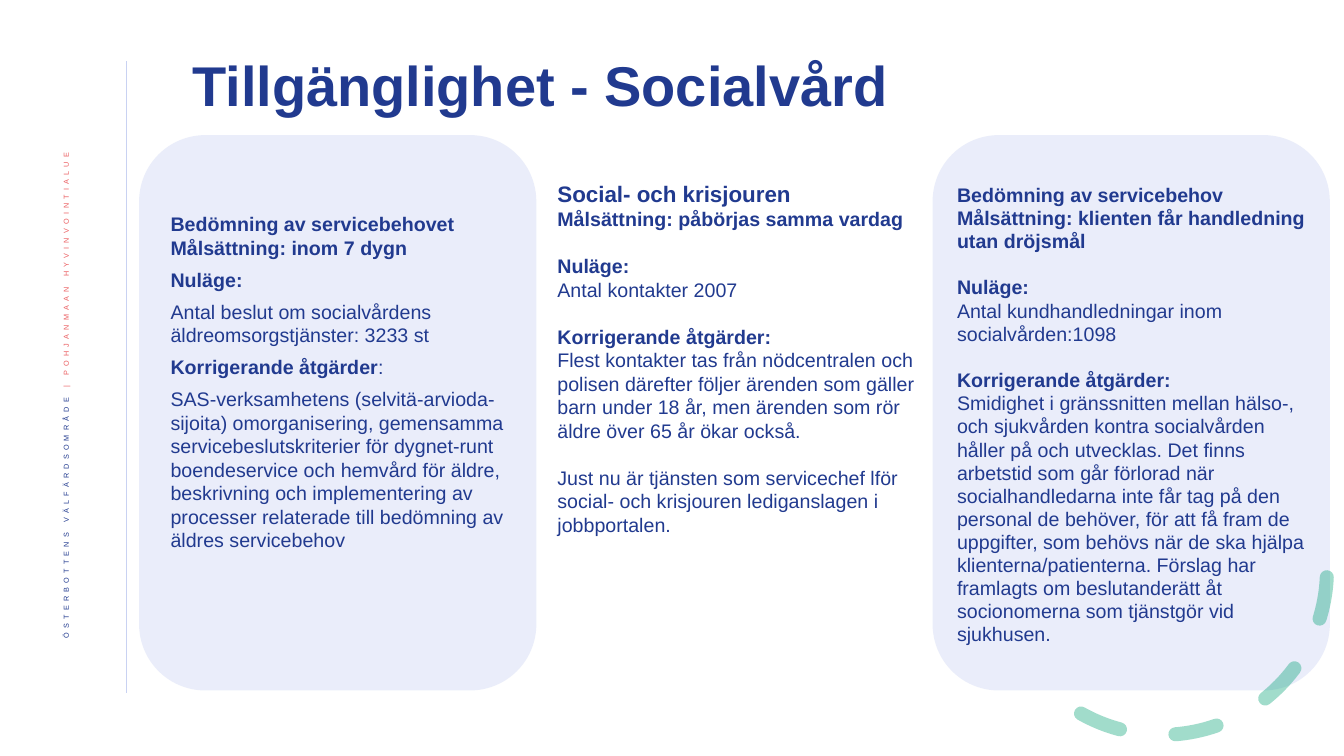
from lxml.etree import SubElement
from pptx import Presentation
from pptx.dml.color import RGBColor
from pptx.enum.dml import MSO_LINE as Dash
from pptx.enum.shapes import MSO_CONNECTOR as Conn, MSO_SHAPE as Shape
from pptx.enum.text import MSO_ANCHOR as Anchor, PP_ALIGN as Align
from pptx.oxml.ns import qn
from pptx.util import Inches, Pt

NAVY = RGBColor(0x21, 0x3A, 0x8F)
CORAL = RGBColor(0xEB, 0x5C, 0x5F)
PALE = RGBColor(0xC9, 0xD2, 0xF2)
GREEN = RGBColor(0x00, 0xA1, 0x74)
FONT = "Arial"

# Each paragraph: text, bold, formats that differ from the column's own
LEFT = [
    ("Bedömning av servicebehovet Målsättning: inom 7 dygn", True, {}),
    ("Nuläge:", True, {}),
    ("Antal beslut om socialvårdens äldreomsorgstjänster: 3233 st", False, {}),
    ("Korrigerande åtgärder", True, {"tail": ":"}),
    ("SAS-verksamhetens (selvitä-arvioda-sijoita) omorganisering, gemensamma "
     "servicebeslutskriterier för dygnet-runt boendeservice och hemvård för äldre, "
     "beskrivning och implementering av processer relaterade till bedömning av "
     "äldres servicebehov", False, {}),
]
GAP = {"space_before": Pt(16.8)}
MIDDLE = [
    ("Social- och krisjouren", True, {"size": 16, "line_spacing": Pt(19)}),
    ("Målsättning: påbörjas samma vardag", True, {}),
    ("Nuläge:", True, GAP),
    ("Antal kontakter 2007", False, {}),
    ("Korrigerande åtgärder:", True, GAP),
    ("Flest kontakter tas från nödcentralen och polisen därefter följer ärenden "
     "som gäller barn under 18 år, men ärenden som rör äldre över 65 år ökar också.",
     False, {}),
    ("Just nu är tjänsten som servicechef lför social- och krisjouren "
     "lediganslagen i jobbportalen.", False, GAP),
]
RIGHT = [
    ("Bedömning av servicebehov", True, {"line_spacing": Pt(18.8)}),
    ("Målsättning: klienten får handledning utan dröjsmål", True, {}),
    ("Nuläge:", True, GAP),
    ("Antal kundhandledningar inom socialvården:1098", False, {}),
    ("Korrigerande åtgärder:", True, GAP),
    ("Smidighet i gränssnitten mellan hälso-, och sjukvården kontra socialvården "
     "håller på och utvecklas. Det finns arbetstid som går förlorad när "
     "socialhandledarna inte får tag på den personal de behöver, för att få fram de "
     "uppgifter, som behövs när de ska hjälpa klienterna/patienterna. Förslag har "
     "framlagts om beslutanderätt åt socionomerna som tjänstgör vid sjukhusen.",
     False, {}),
]


def style(item, values):
    for name, value in values.items():
        setattr(item, name, value)


def fade(node, percent):
    """Make the solid colour below node partly transparent."""
    color = node.find(".//" + qn("a:srgbClr"))
    SubElement(color, qn("a:alpha"), val=str(percent * 1000))


def add_run(para, text, size, bold=False, color=NAVY):
    run = para.add_run()
    run.text = text
    style(run.font, {"name": FONT, "size": Pt(size), "bold": bold})
    run.font.color.rgb = color
    return run


def add_box(slide, left, top, width, height):
    box = slide.shapes.add_textbox(*map(Inches, (left, top, width, height)))
    box.text_frame.word_wrap = True
    return box.text_frame


def fill_text(frame, rows, **base):
    for i, (text, bold, extra) in enumerate(rows):
        para = frame.paragraphs[0] if i == 0 else frame.add_paragraph()
        form = {"alignment": Align.LEFT, **base, **extra}
        size, tail = form.pop("size", 14), form.pop("tail", "")
        style(para, form)
        add_run(para, text, size, bold)
        if tail:
            add_run(para, tail, size)


def add_card(slide, left, indent, bottom):
    """Add a rounded card and return its text frame, inset at left and bottom."""
    card = slide.shapes.add_shape(
        Shape.ROUNDED_RECTANGLE, *map(Inches, (left, 1.34, 3.94, 5.51)))
    card.shadow.inherit = False
    card.fill.solid()
    card.fill.fore_color.rgb = PALE
    fade(card.fill._xPr, 38)
    card.line.fill.background()
    style(card.text_frame, {
        "word_wrap": True, "vertical_anchor": Anchor.MIDDLE,
        "margin_left": Inches(indent), "margin_right": 0,
        "margin_top": Inches(0.02), "margin_bottom": Inches(bottom)})
    return card.text_frame


def add_rule(slide):
    rule = slide.shapes.add_connector(
        Conn.STRAIGHT, *map(Inches, (1.25, 0.61, 1.25, 6.88)))
    rule.line.color.rgb = PALE
    rule.line.width = Pt(0.5)
    SubElement(rule._element.spPr, qn("a:effectLst"))


def add_side(slide):
    """Add the organisation's name, reading upwards."""
    frame = add_box(slide, 0.42, 1.42, 0.52, 5.73)
    frame.vertical_anchor = Anchor.MIDDLE
    frame._txBody.bodyPr.set("vert", "vert270")
    para = frame.paragraphs[0]
    style(para, {"alignment": Align.RIGHT, "line_spacing": 0.9})
    for text, color in (("ÖSTERBOTTENS VÄLFÄRDSOMRÅDE ", NAVY),
                        ("| POHJANMAAN HYVINVOINTIALUE", CORAL)):
        props = add_run(para, text, 9, color=color)._r.get_or_add_rPr()
        props.set("baseline", "30000")
        props.set("spc", "300")


def add_arc(slide):
    arc = slide.shapes.add_shape(
        Shape.ARC, *map(Inches, (9.89, 4.02, 3.27, 3.27)))
    arc.shadow.inherit = False
    arc.rotation = 98.9
    arc.adjustments[0], arc.adjustments[1] = 158.17, 17.81
    arc.fill.background()
    arc.line.color.rgb = GREEN
    style(arc.line, {"width": Pt(10), "dash_style": Dash.DASH})
    edge = arc.line._get_or_add_ln()
    edge.set("cap", "rnd")
    fade(edge, 36)


def main():
    deck = Presentation()
    style(deck, {"slide_width": Inches(13.33), "slide_height": Inches(7.5)})
    slide = deck.slides.add_slide(deck.slide_layouts[6])
    add_rule(slide)
    add_side(slide)
    title = add_box(slide, 1.81, 0.45, 10.2, 0.85)
    title.vertical_anchor = Anchor.MIDDLE
    fill_text(title, [("Tillgänglighet - Socialvård", True, {})],
              size=40, line_spacing=0.9)
    fill_text(add_card(slide, 9.25, 0.05, 0.02), RIGHT, line_spacing=Pt(16.5))
    add_arc(slide)
    fill_text(add_card(slide, 1.38, 0.12, 0.63), LEFT,
              line_spacing=Pt(16.8), space_after=Pt(6))
    fill_text(add_box(slide, 5.43, 1.74, 3.81, 4.36), MIDDLE,
              line_spacing=Pt(16.8))
    deck.save("out.pptx")


if __name__ == "__main__":
    main()
